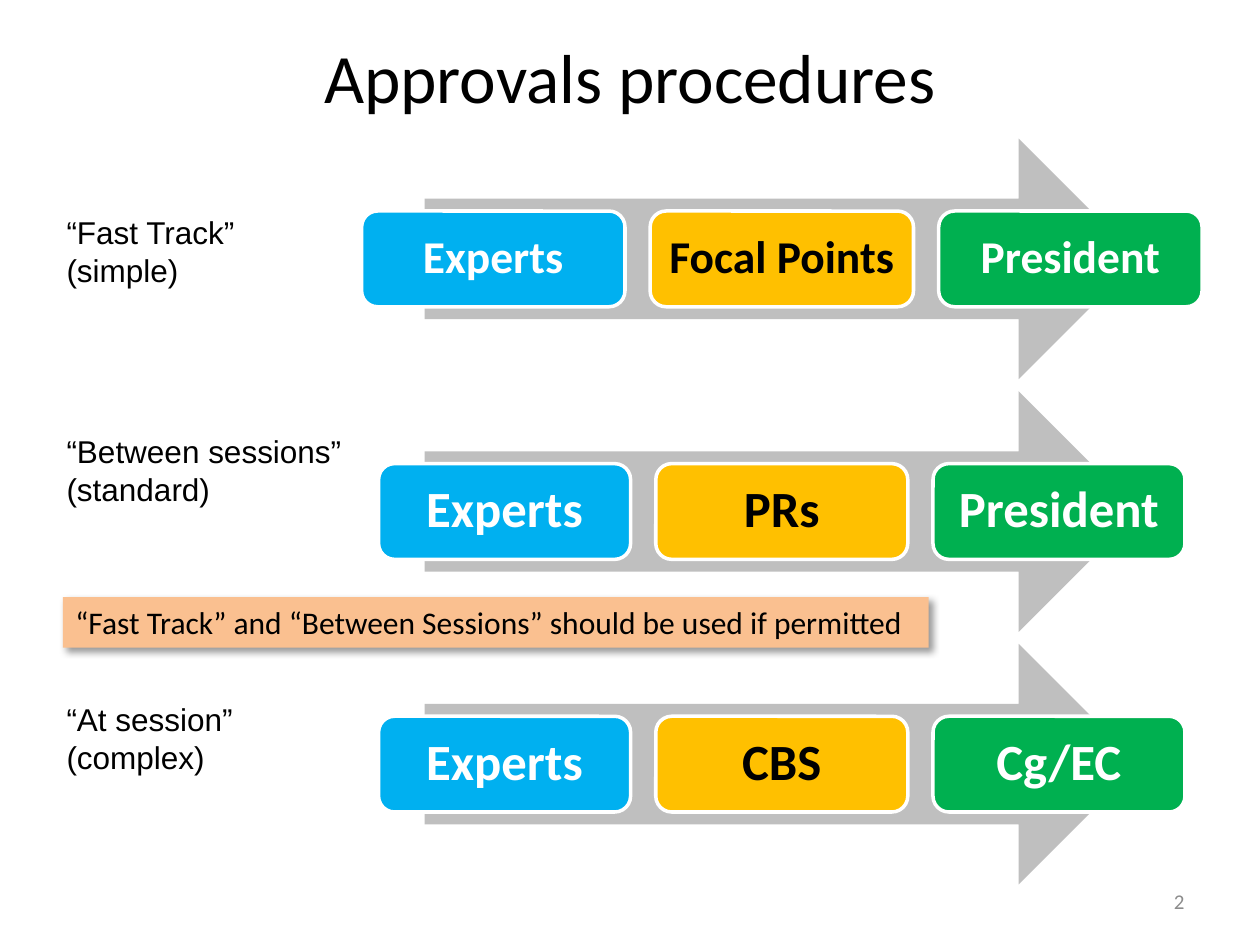
"""Build the slide of the three approvals procedures."""
from lxml.etree import SubElement
from pptx import Presentation
from pptx.dml.color import RGBColor
from pptx.enum.shapes import MSO_SHAPE
from pptx.enum.text import MSO_ANCHOR, PP_ALIGN
from pptx.oxml.ns import qn
from pptx.util import Inches, Pt

BLACK = RGBColor(0x00, 0x00, 0x00)
WHITE = RGBColor(0xFF, 0xFF, 0xFF)
GREY = RGBColor(0x8C, 0x8C, 0x8C)
ARROW_GREY = RGBColor(0xBF, 0xBF, 0xBF)
BLUE = RGBColor(0x00, 0xB0, 0xF0)
AMBER = RGBColor(0xFF, 0xC0, 0x00)
GREEN = RGBColor(0x00, 0xB0, 0x50)
PEACH = RGBColor(0xFA, 0xC0, 0x90)

TITLE = "Approvals procedures"
NOTE = "“Fast Track” and “Between Sessions” should be used if permitted"
PAGE_NUMBER = "2"
STEP_COLOURS = [(BLUE, WHITE), (AMBER, BLACK), (GREEN, WHITE)]
PROCEDURES = [
    {"label": ["“Fast Track”", "(simple)"], "label_top": 1.64, "label_height": 1.11,
     "steps": ["Experts", "Focal Points", "President"], "step_width": 2.09, "size": 26},
    {"label": ["“Between sessions”", "(standard)"], "label_top": 3.38, "label_height": 1.51,
     "steps": ["Experts", "PRs", "President"], "step_width": 2, "size": 29},
    {"label": ["“At session”", "(complex)"], "label_top": 5.51, "label_height": 1.11,
     "steps": ["Experts", "CBS", "Cg/EC"], "step_width": 2, "size": 29},
]

ARROW_LEFT, ARROW_TOP, ARROW_WIDTH, ARROW_HEIGHT = 3.37, 1.1, 5.67, 1.91
ROW_PITCH = 2.005
STEP_HEIGHT, STEP_GAP = 0.76, 0.2


def write(box, lines, size, colour, font="Calibri", bold=False,
          align=PP_ALIGN.LEFT, anchor=MSO_ANCHOR.TOP, spacing=None):
    frame = box.text_frame
    frame.word_wrap = True
    frame.vertical_anchor = anchor
    for index, line in enumerate(lines):
        para = frame.paragraphs[0] if index == 0 else frame.add_paragraph()
        para.alignment = align
        para.line_spacing = spacing
        span = para.add_run()
        span.text = line
        span.font.name = font
        span.font.size = Pt(size)
        span.font.bold = bold
        span.font.color.rgb = colour
    return frame


def add_text(page, place, lines, size, colour, **style):
    box = page.shapes.add_textbox(*map(Inches, place))
    return write(box, lines, size, colour, **style)


def add_filled(shapes, kind, place, colour):
    shape = shapes.add_shape(kind, *map(Inches, place))
    shape.shadow.inherit = False
    shape.fill.solid()
    shape.fill.fore_color.rgb = colour
    shape.line.fill.background()
    return shape


def add_procedure(page, row, procedure):
    top = ARROW_TOP + row * ROW_PITCH
    width = procedure["step_width"]
    steps = procedure["steps"]
    row_width = len(steps) * width + (len(steps) - 1) * STEP_GAP
    left = ARROW_LEFT + (ARROW_WIDTH - row_width) / 2
    step_top = top + (ARROW_HEIGHT - STEP_HEIGHT) / 2
    shapes = page.shapes.add_group_shape().shapes
    add_filled(shapes, MSO_SHAPE.RIGHT_ARROW,
               (ARROW_LEFT, top, ARROW_WIDTH, ARROW_HEIGHT), ARROW_GREY)
    for column, (step, (fill, ink)) in enumerate(zip(steps, STEP_COLOURS)):
        place = (left + column * (width + STEP_GAP), step_top, width, STEP_HEIGHT)
        box = add_filled(shapes, MSO_SHAPE.ROUNDED_RECTANGLE, place, fill)
        box.line.color.rgb = WHITE
        box.line.width = Pt(2)
        frame = write(box, [step], procedure["size"], ink, bold=True,
                      align=PP_ALIGN.CENTER, anchor=MSO_ANCHOR.MIDDLE, spacing=0.9)
        frame.margin_left = frame.margin_right = Inches(0.05)


def add_note(page):
    box = add_filled(page.shapes, MSO_SHAPE.RECTANGLE, (0.5, 4.74, 6.87, 0.4), PEACH)
    write(box, [NOTE], 18, BLACK)
    effects = box._element.spPr.find(qn("a:effectLst"))
    shadow = SubElement(effects, qn("a:outerShdw"), blurRad=str(Pt(4)),
                        dist=str(Pt(3)), dir="2700000", algn="tl", rotWithShape="0")
    colour = SubElement(shadow, qn("a:srgbClr"), val=str(BLACK))
    SubElement(colour, qn("a:alpha"), val="40000")


def main():
    deck = Presentation()
    deck.slide_width, deck.slide_height = Inches(10), Inches(7.5)
    page = deck.slides.add_slide(deck.slide_layouts[6])
    title = add_text(page, (0.5, 0.27, 9, 1.25), [TITLE], 39.6, BLACK, align=PP_ALIGN.CENTER)
    title.margin_top = 0
    add_text(page, (7.17, 6.95, 2.33, 0.4), [PAGE_NUMBER], 12, GREY,
             align=PP_ALIGN.RIGHT, anchor=MSO_ANCHOR.MIDDLE)
    for row, procedure in enumerate(PROCEDURES):
        add_procedure(page, row, procedure)
        place = (0.43, procedure["label_top"], 2.44, procedure["label_height"])
        add_text(page, place, procedure["label"], 18, BLACK, font="Arial")
    add_note(page)
    deck.save("out.pptx")


if __name__ == "__main__":
    main()
